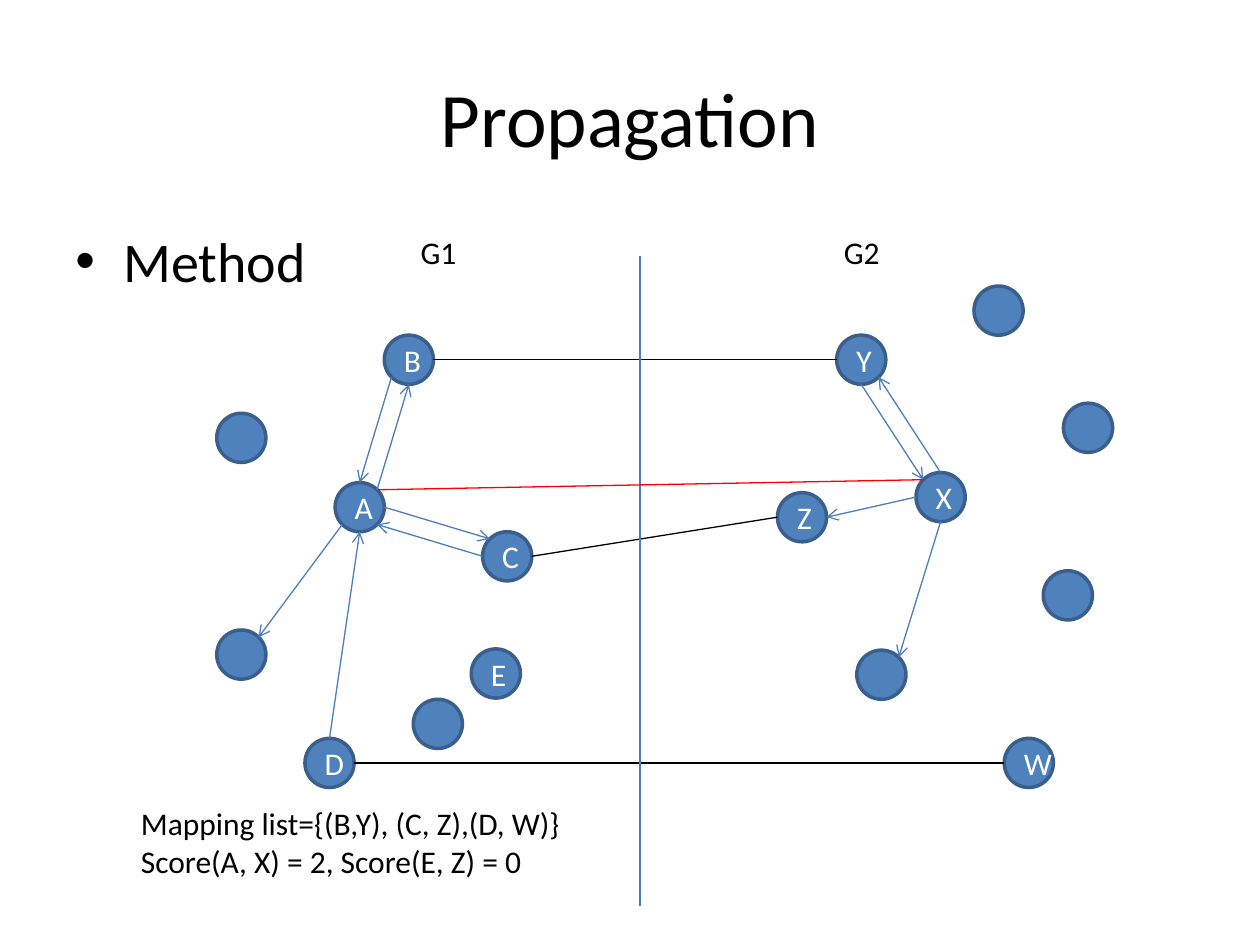
from math import cos, radians, sin

from lxml import etree
from pptx import Presentation
from pptx.dml.color import RGBColor
from pptx.enum import shapes as sh, text as tx
from pptx.oxml import ns
from pptx.util import Inches, Pt

THEME = {
    "font": "Calibri",
    "ink": "000000", "light": "FFFFFF", "node": "4F81BD", "rim": "3A5F8C",
    "edge": "4B7EBC", "guess": "FF0000",
    "title": 44, "body": 32, "label": 18,
    "thin": 0.75, "thick": 2,
}
SIZE = 0.39

# Text boxes: lines, box, format
TEXTS = [
    (["Propagation"], (0.5, 0.3, 9, 1.25),
     {"size": "title", "align": "CENTER", "anchor": "MIDDLE"}),
    (["Method"], (0.5, 1.75, 9, 4.95), {"size": "body", "bullet": True}),
    (["G1"], (3.05, 1.8, 0.86, 0.4), {"align": "CENTER"}),
    (["G2"], (6.41, 1.8, 0.86, 0.4), {"align": "CENTER"}),
    (["Mapping list={(B,Y), (C, Z),(D, W)}",
      "Score(A, X) = 2, Score(E, Z) = 0"], (1.02, 6.33, 8.2, 0.71), {}),
]

# Left and top of each node; lower-case names carry no label
NODES = {
    "A": (2.66, 3.83), "D": (2.42, 5.86), "p": (3.28, 5.55), "q": (1.72, 5),
    "C": (3.83, 4.22), "r": (1.72, 3.28), "B": (3.05, 2.66),
    "Y": (6.64, 2.66), "X": (7.27, 3.75), "s": (8.44, 3.2),
    "Z": (6.17, 3.91), "t": (6.8, 5.16), "u": (8.28, 4.53),
    "W": (7.97, 5.86), "E": (3.74, 5.15), "v": (7.73, 2.27),
}
DIVIDER = ((5.08, 2.03), (5.08, 7.19))

# Links: start node and side, end node and side
PAIRS = ["B e Y w", "C e Z w", "D e W w"]
GUESS = "A ne X nw"
ARROWS = [
    "A ne B s", "B sw A n", "A sw q ne", "A e C nw", "C w A se",
    "X n Y se", "Y s X nw", "X w Z e", "X s t ne", "D n A s",
]
ANGLES = {side: 45 * i for i, side in
          enumerate(["e", "se", "s", "sw", "w", "nw", "n", "ne"])}


def color(name):
    return RGBColor.from_string(THEME[name])


def write(shape, lines, size="label", ink="ink", align="LEFT",
          anchor="TOP", bullet=False):
    frame = shape.text_frame
    frame.word_wrap = True
    frame.vertical_anchor = getattr(tx.MSO_ANCHOR, anchor)
    frame.text = "\n".join(lines)
    for para in frame.paragraphs:
        para.alignment = getattr(tx.PP_ALIGN, align)
        font = para.runs[0].font
        font.name, font.size = THEME["font"], Pt(THEME[size])
        font.color.rgb = color(ink)
        if bullet:
            props = para._p.get_or_add_pPr()
            props.set("marL", str(Inches(0.38)))
            props.set("indent", str(-Inches(0.38)))
            face = etree.SubElement(props, ns.qn("a:buFont"))
            face.set("typeface", "Arial")
            etree.SubElement(props, ns.qn("a:buChar")).set("char", "•")


def draw_node(slide, name, spot):
    dot = slide.shapes.add_shape(
        sh.MSO_SHAPE.OVAL, *map(Inches, (*spot, SIZE, SIZE)))
    dot.shadow.inherit = False
    dot.fill.solid()
    dot.fill.fore_color.rgb = color("node")
    dot.line.color.rgb = color("rim")
    dot.line.width = Pt(THEME["thick"])
    if name.isupper():
        write(dot, [name], ink="light", align="CENTER", anchor="MIDDLE")


def rim_point(name, side):
    """Point on a node's circle at a compass side."""
    left, top = NODES[name]
    turn = radians(ANGLES[side])
    half = SIZE / 2
    return left + half + half * cos(turn), top + half + half * sin(turn)


def draw_line(slide, start, end, ink, arrow=False):
    line = slide.shapes.add_connector(
        sh.MSO_CONNECTOR.STRAIGHT, *map(Inches, (*start, *end)))
    line.line.color.rgb = color(ink)
    line.line.width = Pt(THEME["thin"])
    if arrow:
        tip = etree.SubElement(line.line._get_or_add_ln(), ns.qn("a:tailEnd"))
        tip.set("type", "arrow")
    etree.SubElement(line._element.spPr, ns.qn("a:effectLst"))


def link(slide, route, ink, arrow=False):
    first, out, last, into = route.split()
    draw_line(slide, rim_point(first, out), rim_point(last, into), ink, arrow)


def main():
    deck = Presentation()
    deck.slide_width, deck.slide_height = Inches(10), Inches(7.5)
    slide = deck.slides.add_slide(deck.slide_layouts[6])
    for lines, box, style in TEXTS:
        write(slide.shapes.add_textbox(*map(Inches, box)), lines, **style)
    for name, spot in NODES.items():
        draw_node(slide, name, spot)
    for route in PAIRS:
        link(slide, route, "ink")
    draw_line(slide, *DIVIDER, "edge")
    link(slide, GUESS, "guess")
    for route in ARROWS:
        link(slide, route, "edge", arrow=True)
    deck.save("out.pptx")


if __name__ == "__main__":
    main()
